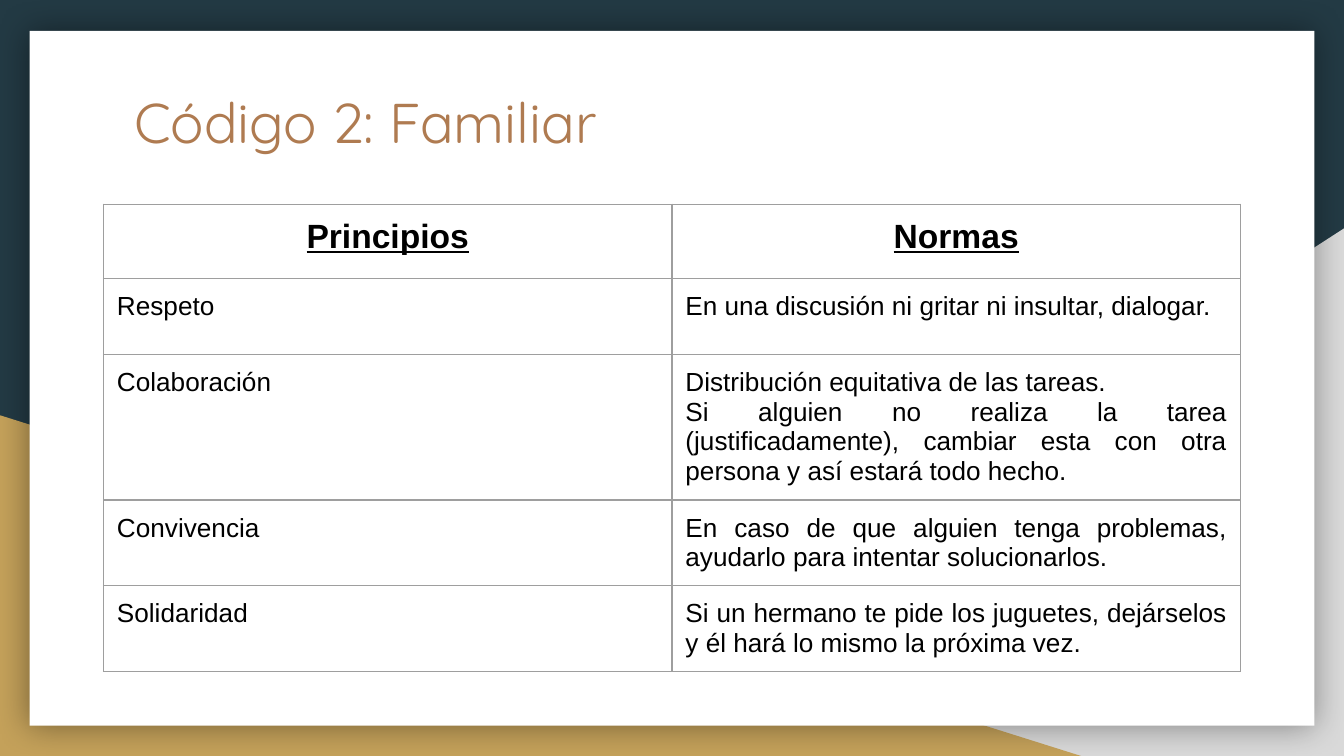
"""Build the slide of family principles and norms."""
from lxml import etree
from pptx import Presentation
from pptx import util as u
from pptx.dml.color import RGBColor
from pptx.enum import shapes, text
from pptx.oxml import parse_xml
from pptx.oxml.ns import nsdecls, qn

COLORS = {
    "night": "233A44",
    "silver": "D9D9D9",
    "gold": "C4A15A",
    "paper": "FFFFFF",
    "copper": "AF7B51",
    "ink": "000000",
    "rule": "9E9E9E",
}
ROWS = [
    ("Principios", "Normas"),
    ("Respeto", "En una discusión ni gritar ni insultar, dialogar."),
    ("Colaboración", "Distribución equitativa de las tareas.\n"
     "Si alguien no realiza la tarea (justificadamente), "
     "cambiar esta con otra persona y así estará todo hecho."),
    ("Convivencia", "En caso de que alguien tenga problemas, "
     "ayudarlo para intentar solucionarlos."),
    ("Solidaridad", "Si un hermano te pide los juguetes, "
     "dejárselos y él hará lo mismo la próxima vez."),
]
HEIGHTS = [0.55, 0.57, 1.08, 0.63, 0.64]


class Painter:
    def __init__(self, slide):
        self.slide = slide
        self.margin = u.Inches(0.1)

    def color(self, name):
        return RGBColor.from_string(COLORS[name])

    def background(self, name):
        fill = self.slide.background.fill
        fill.solid()
        fill.fore_color.rgb = self.color(name)

    def panel(self, kind, bounds, name, flip=False):
        shape = self.slide.shapes.add_shape(kind, *map(u.Inches, bounds))
        shape.shadow.inherit = False
        shape.fill.solid()
        shape.fill.fore_color.rgb = self.color(name)
        shape.line.fill.background()
        if flip:
            shape.element.spPr.find(qn("a:xfrm")).set("flipH", "1")
        return shape

    def glow(self, shape, blur, opacity):
        effects = shape.element.spPr.find(qn("a:effectLst"))
        effects.append(parse_xml(
            f'<a:outerShdw {nsdecls("a")} blurRad="{u.Pt(blur)}" dist="0" '
            f'algn="ctr" rotWithShape="0"><a:srgbClr val="{COLORS["ink"]}">'
            f'<a:alpha val="{opacity * 1000}"/></a:srgbClr></a:outerShdw>'))

    def style(self, span, font, size, name, strong=False):
        span.font.name = font
        span.font.size = u.Pt(size)
        span.font.color.rgb = self.color(name)
        span.font.bold = strong
        span.font.underline = strong

    def title(self, words, bounds):
        box = self.slide.shapes.title
        box.left, box.top, box.width, box.height = map(u.Inches, bounds)
        frame = box.text_frame
        frame.text = words
        frame.word_wrap = True
        frame.auto_size = text.MSO_AUTO_SIZE.NONE
        frame.vertical_anchor = text.MSO_ANCHOR.TOP
        frame.margin_left = frame.margin_right = self.margin
        frame.margin_top = frame.margin_bottom = self.margin
        para = frame.paragraphs[0]
        para.alignment = text.PP_ALIGN.LEFT
        self.style(para.runs[0], "Quicksand", 30, "copper")
        box.element.getparent().append(box.element)

    def borders(self, cell):
        properties = cell._tc.get_or_add_tcPr()
        for index, side in enumerate(("lnL", "lnR", "lnT", "lnB")):
            line = etree.Element(qn(f"a:{side}"), w=str(u.Pt(0.75)))
            fill = etree.SubElement(line, qn("a:solidFill"))
            etree.SubElement(fill, qn("a:srgbClr"), val=COLORS["rule"])
            properties.insert(index, line)

    def cell(self, cell, words, heading):
        cell.fill.background()
        cell.margin_left = cell.margin_right = self.margin
        cell.margin_top = cell.margin_bottom = self.margin
        cell.text_frame.text = words
        align = text.PP_ALIGN.CENTER if heading else text.PP_ALIGN.JUSTIFY
        for para in cell.text_frame.paragraphs:
            para.alignment = align
            self.style(para.runs[0], "Arial", 18 if heading else 14, "ink", heading)
        self.borders(cell)

    def table(self, rows, heights, left, top, column_width):
        columns = len(rows[0])
        table = self.slide.shapes.add_table(
            len(rows), columns, u.Inches(left), u.Inches(top),
            u.Inches(column_width * columns), u.Inches(sum(heights))).table
        table.first_row = table.horz_banding = False
        for column in table.columns:
            column.width = u.Inches(column_width)
        for i, (row, height) in enumerate(zip(rows, heights)):
            table.rows[i].height = u.Inches(height)
            for j, words in enumerate(row):
                self.cell(table.cell(i, j), words, heading=i == 0)


def main():
    deck = Presentation()
    deck.slide_width = u.Inches(10)
    deck.slide_height = u.Inches(10 * 9 / 16)
    page = Painter(deck.slides.add_slide(deck.slide_layouts[5]))
    kinds = shapes.MSO_SHAPE
    page.background("night")
    page.panel(kinds.RIGHT_TRIANGLE, (3.92, 1.7, 6.08, 3.93), "silver", flip=True)
    page.panel(kinds.RIGHT_TRIANGLE, (0, 3.09, 8.06, 2.54), "gold")
    sheet = page.panel(kinds.RECTANGLE, (0.22, 0.23, 9.56, 5.17), "paper")
    page.glow(sheet, blur=18, opacity=40)
    page.title("Código 2: Familiar", (0.9, 0.55, 8.21, 0.81))
    page.table(ROWS, HEIGHTS, left=0.77, top=1.52, column_width=4.23)
    deck.save("out.pptx")


if __name__ == "__main__":
    main()
